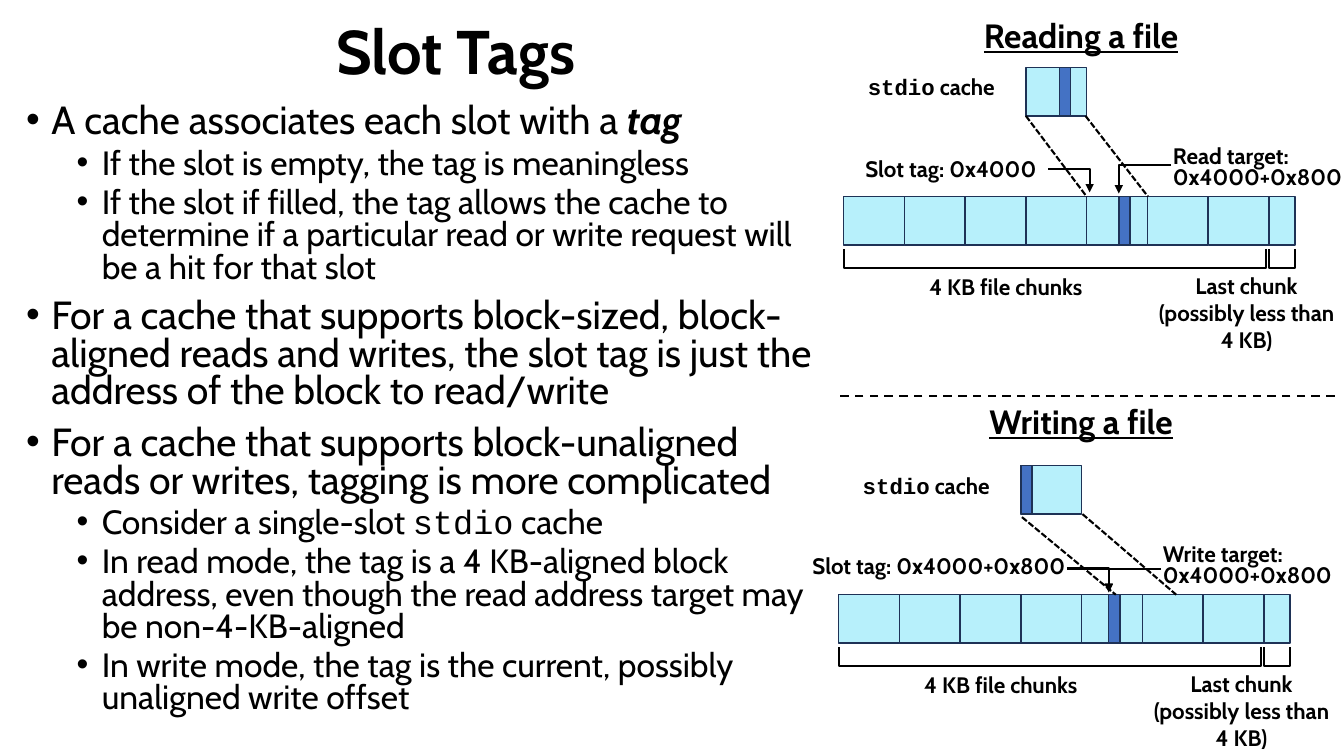
from dataclasses import dataclass

from lxml.etree import SubElement
from pptx import Presentation
from pptx.dml.color import RGBColor
from pptx.enum.dml import MSO_LINE
from pptx.enum.shapes import MSO_CONNECTOR as Link, MSO_SHAPE as Shape
from pptx.enum.text import MSO_ANCHOR as Anchor, MSO_AUTO_SIZE as Fit, PP_ALIGN as Align
from pptx.oxml.ns import qn
from pptx.util import Pt


@dataclass(frozen=True)
class Theme:
    black = RGBColor.from_string("000000")
    edge = RGBColor.from_string("1E3256")
    chunk = RGBColor.from_string("B7F0FB")
    target = RGBColor.from_string("4472C4")
    font = "Cabin"
    mono = "Courier New"
    title = 44
    body = 28
    sub = 24
    label = 16


theme = Theme()
deck = Presentation()
deck.slide_width, deck.slide_height = Pt(960), Pt(540)
slide = deck.slides.add_slide(deck.slide_layouts[1])
shapes = slide.shapes


def write(para, runs, size, bold=False):
    """Add (text, style) runs; style is "", "mono", "tag" or "under"."""
    for text, style in runs:
        run = para.add_run()
        run.text = text
        font = run.font
        font.name = theme.mono if style == "mono" else theme.font
        font.size = Pt(size)
        font.bold = bold or style == "tag"
        font.italic = style == "tag"
        font.underline = style == "under"
        font.color.rgb = theme.black


def link(start, end, dash=None):
    line = shapes.add_connector(Link.STRAIGHT, *map(Pt, start + end))
    line.line.color.rgb = theme.black
    line.line.width = Pt(1.5)
    if dash:
        line.line.dash_style = dash
    SubElement(line._element.spPr, qn("a:effectLst"))
    return line


# Title and list
title, body = shapes.title, slide.placeholders[1]
for holder, place in ((title, (0, 7.2, 651, 64)), (body, (11.5, 71.3, 582, 462))):
    holder.left, holder.top, holder.width, holder.height = map(Pt, place)
    holder.text_frame.word_wrap = True
    holder.text_frame.auto_size = Fit.NONE
title.text_frame.vertical_anchor = Anchor.MIDDLE
body.text_frame.vertical_anchor = Anchor.TOP
head = title.text_frame.paragraphs[0]
head.alignment, head.line_spacing = Align.CENTER, 0.9
write(head, [("Slot Tags", "")], theme.title, True)

points = [
    (0, [("A cache associates each slot with a ", ""), ("tag", "tag")]),
    (1, [("If the slot is empty, the tag is meaningless", "")]),
    (1, [("If the slot if filled, the tag allows the cache to determine if a "
          "particular read or write request will be a hit for that slot", "")]),
    (0, [("For a cache that supports block-sized, block-aligned reads and writes, "
          "the slot tag is just the address of the block to read/write", "")]),
    (0, [("For a cache that supports block-unaligned reads or writes, "
          "tagging is more complicated", "")]),
    (1, [("Consider a single-slot ", ""), ("stdio", "mono"), (" cache", "")]),
    (1, [("In read mode, the tag is a 4 KB-aligned block address, even though "
          "the read address target may be non-4-KB-aligned", "")]),
    (1, [("In write mode, the tag is the current, possibly unaligned write offset", "")]),
]
for i, (level, runs) in enumerate(points):
    para = body.text_frame.paragraphs[0] if i == 0 else body.text_frame.add_paragraph()
    para.level, para.alignment, para.line_spacing = level, Align.LEFT, 0.8
    para.space_before = Pt(5 if level else 10)
    props = para._p.get_or_add_pPr()
    props.set("marL", str(Pt(54 if level else 18)))
    props.set("indent", str(Pt(-18)))
    SubElement(props, qn("a:buFont"), typeface="Arial")
    SubElement(props, qn("a:buChar"), char="•")
    write(para, runs, theme.sub if level else theme.body)

link((953.3, 283), (599, 283), MSO_LINE.DASH)

# Two panels; lengths in each are measured from the left top of its file row
cell, tall, last, mark = 43.4, 34.6, 18.7, 8
slot, lift = 3 * cell, -92.2
panels = [
    dict(at=(602.6, 140.4), name="Reading a file", head=(7.2, -133.2),
         marks=(154.1, 196.6),
         dashes=[((slot, -57.6), (slot + cell, 0)), ((172.8, -57.6), (217.4, 0))],
         tag="Slot tag: 0x4000", spot=(-2.2, -33.1, 157.7),
         goal="Read target:", aim=(228.2, -38.2),
         arrows=[((146.2, -19.4), (175.7, -2.9)), ((234, -22.3), (196.6, -2.2))]),
    dict(at=(599, 424.8), name="Writing a file", head=(10.8, -141.8),
         marks=(slot, 193),
         dashes=[((131, -55.4), (198, 0)), ((174.2, -57.6), (241.2, 0))],
         tag="Slot tag: 0x4000+0x800", spot=(-30.2, -33.8, 203.8),
         goal="Write target:", aim=(224.6, -38.2),
         arrows=[((163.4, -18.7), (193, -2.2)), ((230.4, -18.7), (193, -1.6))]),
]
for panel in panels:
    left, top = panel["at"]

    rects = [(n * cell, 0, cell if n < 7 else last, theme.chunk) for n in range(8)]
    rects.append((slot, lift, cell, theme.chunk))
    rects += [(x, y, mark, theme.target) for x, y in zip(panel["marks"], (lift, 0))]
    for x, y, wide, fill in rects:
        rect = shapes.add_shape(Shape.RECTANGLE, Pt(left + x), Pt(top + y), Pt(wide), Pt(tall))
        rect.shadow.inherit = False
        rect.fill.solid()
        rect.fill.fore_color.rgb = fill
        rect.line.color.rgb = theme.edge
        rect.line.width = Pt(1)

    for x, wide in ((0, 301.7), (304, last)):
        deep = 13.7
        # Turned a quarter, so width and height swap about the centre
        brace = shapes.add_shape(Shape.LEFT_BRACKET, Pt(left + x + (wide - deep) / 2),
                                 Pt(top + 37.4 + (deep - wide) / 2), Pt(deep), Pt(wide))
        brace.rotation = 270
        brace.adjustments[0] = 0
        brace.shadow.inherit = False
        brace.fill.background()
        brace.line.color.rgb = theme.black
        brace.line.width = Pt(1.5)

    for start, end in panel["dashes"]:
        link((left + start[0], top + start[1]), (left + end[0], top + end[1]),
             MSO_LINE.SQUARE_DOT)

    for (x1, y1), (x2, y2) in panel["arrows"]:
        low, high = sorted((x1, x2))
        arrow = link((left + low, top + y1), (left + high, top + y2))
        props = arrow._element.spPr
        props.find(qn("a:prstGeom")).set("prst", "bentConnector2")
        if x1 > x2:
            frame = props.find(qn("a:xfrm"))
            frame.set("rot", "10800000")
            frame.set("flipV", "1")
        SubElement(props.find(qn("a:ln")), qn("a:tailEnd"), type="triangle")

    labels = [
        (*panel["head"], 324.7, 36, theme.sub, [[(panel["name"], "under")]]),
        (-25.2, -91.4, 175.7, 26.6, theme.label, [[("stdio", "mono"), (" cache", "")]]),
        (28.1, 51.1, 175.7, 26.6, theme.label, [[("4 KB file chunks", "")]]),
        (215.3, 50.4, 145, 65.5, theme.label, [[("Last chunk (possibly less than 4 KB)", "")]]),
        (*panel["spot"], 26.6, theme.label, [[(panel["tag"], "")]]),
        (*panel["aim"], 136, 37.4, theme.label, [[(panel["goal"], "")], [("0x4000+0x800", "")]]),
    ]
    for x, y, wide, high, size, rows in labels:
        box = shapes.add_textbox(Pt(left + x), Pt(top + y), Pt(wide), Pt(high))
        box.text_frame.word_wrap = True
        for i, runs in enumerate(rows):
            para = box.text_frame.paragraphs[0] if i == 0 else box.text_frame.add_paragraph()
            para.alignment = Align.CENTER if len(rows) == 1 else Align.LEFT
            if len(rows) > 1:
                para.line_spacing = Pt(15)
            write(para, runs, size, True)

deck.save("out.pptx")
